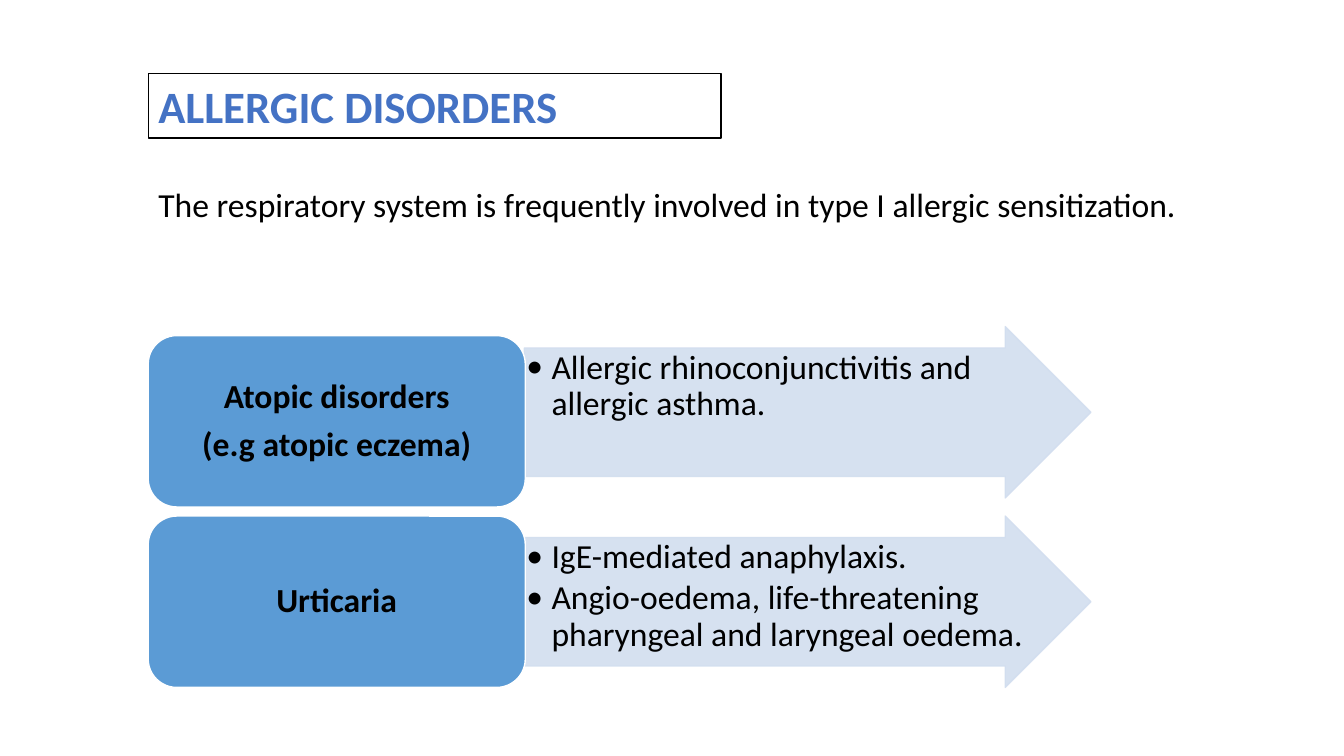
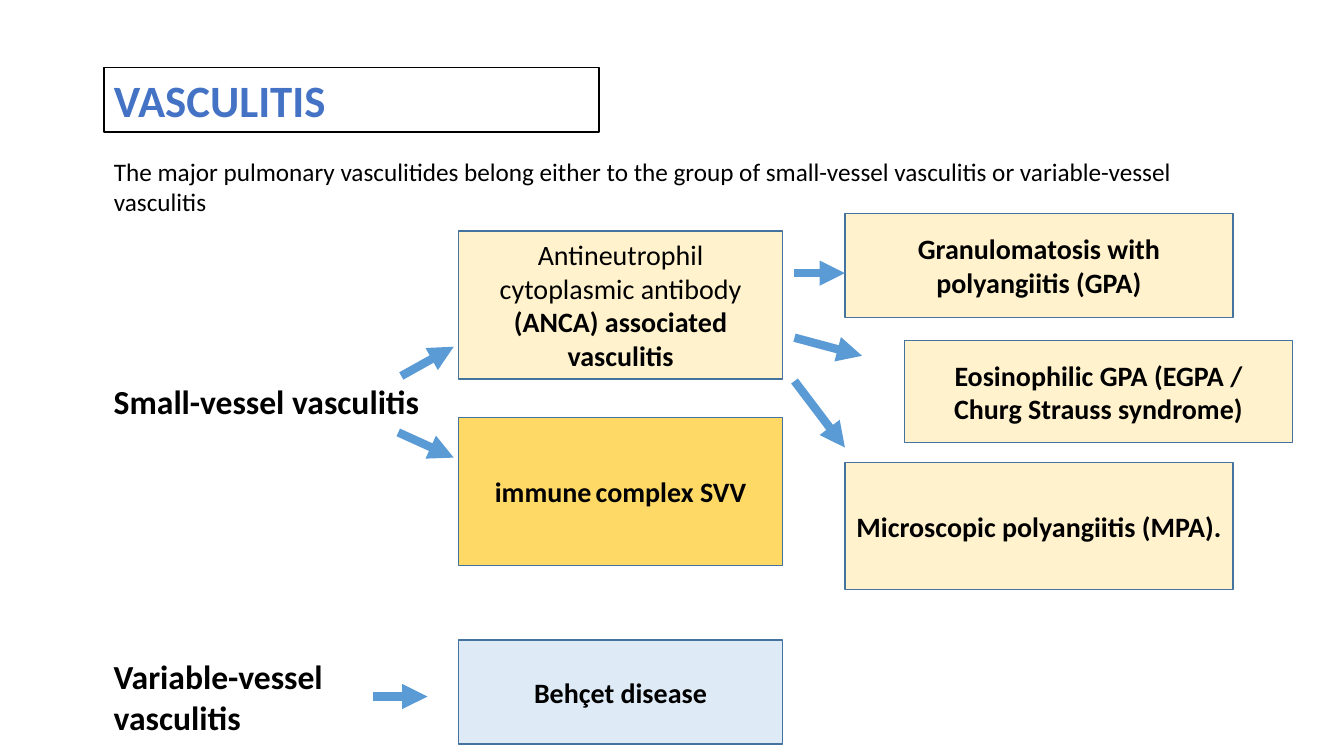
from dataclasses import dataclass

from pptx import Presentation
from pptx.dml.color import RGBColor
from pptx.enum.shapes import MSO_CONNECTOR as CONN, MSO_SHAPE as SHAPE
from pptx.enum.text import MSO_ANCHOR as ANCHOR, MSO_AUTO_SIZE as AUTO, PP_ALIGN as ALIGN
from pptx.oxml.ns import qn
from pptx.util import Inches, Pt
from lxml import etree


@dataclass(frozen=True)
class Theme:
    font: str = "Calibri"
    text: str = "000000"
    title: str = "4472C4"
    paper: str = "FFFFFF"
    blue: str = "5B9BD5"
    pale_arrow: str = "D2DEEF"
    edge: str = "43739E"
    cream: str = "FFF2CC"
    gold: str = "FFD966"
    ice: str = "DEEBF7"
    title_size: int = 32
    large: int = 24
    medium: int = 20
    small: int = 18


T = Theme()

# Content: title, intro, and the parts of each slide
ALLERGY = {
    "title": ("ALLERGIC DISORDERS", (1.47, 0.73, 5.68, 0.64)),
    "intro": ("The respiratory system is frequently involved in type I allergic sensitization.",
              (1.47, 1.77, 11.36, 0.5), T.large),
    "rows": [
        (["Atopic disorders", "(e.g atopic eczema)"],
         ["Allergic rhinoconjunctivitis and allergic asthma."]),
        (["Urticaria"],
         ["IgE-mediated anaphylaxis.",
          "Angio-oedema, life-threatening pharyngeal and laryngeal oedema."]),
    ],
}

MID, MID_W = 4.55, 3.21
RIGHT, RIGHT_W = 8.38, 3.85
VASCULITIS = {
    "title": ("VASCULITIS", (1.03, 0.67, 4.91, 0.64)),
    "intro": ("The major pulmonary vasculitides belong either to the group of "
              "small-vessel vasculitis or variable-vessel vasculitis",
              (1.03, 1.5, 10.85, 0.71), T.small),
    "groups": [
        ("Small-vessel vasculitis", (1.03, 3.73, 3.47, 0.5)),
        ("Variable-vessel vasculitis", (1.03, 6.46, 3.47, 0.91)),
    ],
    # A line is plain text, or a (regular, bold) pair
    "boxes": [
        ([("Antineutrophil cytoplasmic antibody ", "(ANCA) associated vasculitis")],
         (MID, 2.29, MID_W, 1.47), T.cream),
        (["immune\tcomplex SVV"], (MID, 4.14, MID_W, 1.47), T.gold),
        (["Behçet disease"], (MID, 6.35, MID_W, 1.03), T.ice),
        (["Granulomatosis with polyangiitis (GPA)"], (RIGHT, 2.12, RIGHT_W, 1.03), T.cream),
        (["Eosinophilic GPA (EGPA /", "Churg Strauss syndrome)"],
         (8.97, 3.38, RIGHT_W, 1.01), T.cream),
        (["Microscopic polyangiitis (MPA)."], (RIGHT, 4.59, RIGHT_W, 1.26), T.cream),
    ],
    "arrows": [
        (3.98, 3.73, 4.5, 3.44), (3.95, 4.29, 4.5, 4.54), (3.7, 6.91, 4.24, 6.91),
        (7.88, 2.71, RIGHT, 2.71), (7.88, 3.35, 8.55, 3.53), (7.88, 3.78, RIGHT, 4.44),
    ],
}


# Shared helpers
def rgb(value):
    return RGBColor.from_string(value)


def inches(values):
    return [Inches(v) for v in values]


def place(sp, at):
    sp.left, sp.top, sp.width, sp.height = inches(at)


def paint(sp, fill, line):
    sp.fill.solid()
    sp.fill.fore_color.rgb = rgb(fill)
    sp.line.color.rgb = rgb(line)
    sp.line.width = Pt(1)


def write(sp, lines, size, bold=False, color=T.text, align=ALIGN.LEFT,
          anchor=ANCHOR.TOP, spacing=1.0, after=0):
    tf = sp.text_frame
    tf.word_wrap, tf.auto_size, tf.vertical_anchor = True, AUTO.NONE, anchor
    for i, line in enumerate(lines):
        p = tf.paragraphs[0] if i == 0 else tf.add_paragraph()
        p.alignment, p.line_spacing = align, spacing
        p.space_before, p.space_after = Pt(0), Pt(after)
        parts = [(line, bold)] if isinstance(line, str) else zip(line, (False, True))
        for text, is_bold in parts:
            r = p.add_run()
            r.text = text
            r.font.name, r.font.size, r.font.bold = T.font, Pt(size), is_bold
            r.font.color.rgb = rgb(color)


def set_bullet(p, char=None, indent=0.0):
    pPr = p._p.get_or_add_pPr()
    pPr.set("marL", str(Inches(indent)))
    pPr.set("indent", str(-Inches(indent)))
    if char:
        etree.SubElement(pPr, qn("a:buFont")).set("typeface", T.font)
        etree.SubElement(pPr, qn("a:buChar")).set("char", char)
    else:
        etree.SubElement(pPr, qn("a:buNone"))


def add_box(s, kind, at, fill, line):
    sp = s.shapes.add_shape(kind, *inches(at))
    sp.shadow.inherit = False
    paint(sp, fill, line)
    return sp


def add_arrow(s, ends):
    line = s.shapes.add_connector(CONN.STRAIGHT, *inches(ends))
    line.line.color.rgb = rgb(T.blue)
    line.line.width = Pt(6)
    etree.SubElement(line.line._get_or_add_ln(), qn("a:tailEnd")).set("type", "triangle")
    etree.SubElement(line._element.spPr, qn("a:effectLst"))


def start_slide(prs, content):
    s = prs.slides.add_slide(prs.slide_layouts[1])
    title, body = s.shapes.title, s.placeholders[1]
    text, at = content["title"]
    place(title, at)
    paint(title, T.paper, T.text)
    write(title, [text], T.title_size, bold=True, color=T.title)
    text, at, size = content["intro"]
    place(body, at)
    write(body, [text], size)
    set_bullet(body.text_frame.paragraphs[0])
    return s


# Slide 1: each disorder points to its manifestations
def build_allergy(prs):
    s = start_slide(prs, ALLERGY)
    label_left, label_w = 1.47, 3.74
    arrow_left, arrow_w = 5.2, 5.62
    height = 1.7
    for i, (label, effects) in enumerate(ALLERGY["rows"]):
        label_top, arrow_top = 3.33 + i * 1.79, 3.24 + i * 1.88
        sp = add_box(s, SHAPE.RIGHT_ARROW, (arrow_left, arrow_top, arrow_w, height),
                     T.pale_arrow, T.pale_arrow)
        sp.adjustments[0], sp.adjustments[1] = 0.75, 0.5
        for color in sp._element.spPr.iter(qn("a:srgbClr")):
            etree.SubElement(color, qn("a:alpha")).set("val", "90000")
        tf = sp.text_frame
        tf.margin_left = tf.margin_top = tf.margin_bottom = Inches(0.02)
        tf.margin_right = 0
        write(sp, effects, T.large, spacing=0.9, after=3.6)
        for p in tf.paragraphs:
            set_bullet(p, "•", 0.25)

        sp = add_box(s, SHAPE.ROUNDED_RECTANGLE, (label_left, label_top, label_w, height),
                     T.blue, T.paper)
        write(sp, label, T.large, bold=True, align=ALIGN.CENTER,
              anchor=ANCHOR.MIDDLE, spacing=0.9, after=8.4)


# Slide 2: classification tree
def build_vasculitis(prs):
    s = start_slide(prs, VASCULITIS)
    for text, at in VASCULITIS["groups"]:
        write(s.shapes.add_textbox(*inches(at)), [text], T.large, bold=True)
    for lines, at, fill in VASCULITIS["boxes"]:
        sp = add_box(s, SHAPE.RECTANGLE, at, fill, T.edge)
        write(sp, lines, T.medium, bold=True, align=ALIGN.CENTER, anchor=ANCHOR.MIDDLE)
    for ends in VASCULITIS["arrows"]:
        add_arrow(s, ends)


def main():
    prs = Presentation()
    prs.slide_width, prs.slide_height = Inches(13.33), Inches(7.5)
    build_allergy(prs)
    build_vasculitis(prs)
    prs.save("out.pptx")


if __name__ == "__main__":
    main()
